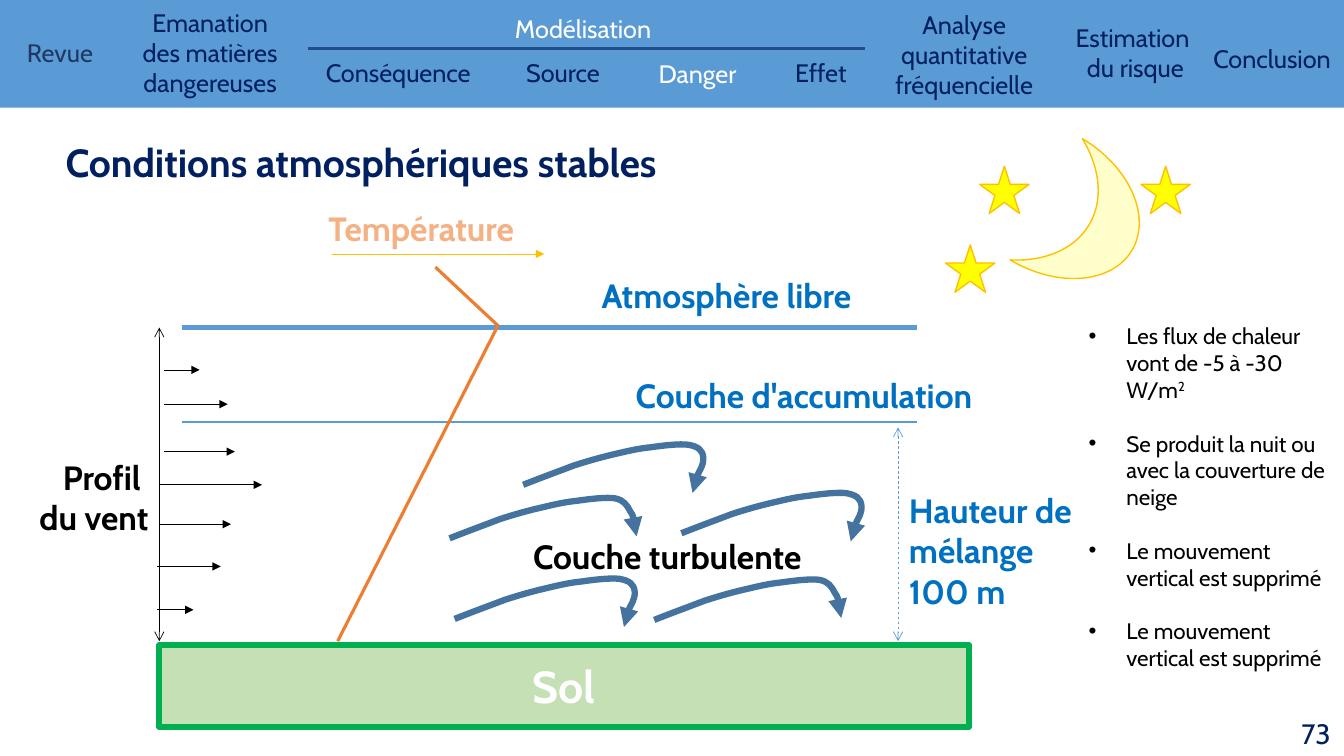
import dataclasses
import typing

import lxml.etree
import pptx
import pptx.dml.color
import pptx.enum.dml
import pptx.enum.shapes
import pptx.enum.text
import pptx.oxml.ns
import pptx.util

Pt = pptx.util.Pt
qn = pptx.oxml.ns.qn
Kind = pptx.enum.shapes.MSO_SHAPE
Align = pptx.enum.text.PP_ALIGN
Anchor = pptx.enum.text.MSO_ANCHOR
NAVY, WHITE, BLACK = "002060", "FFFFFF", "000000"
SKY, BLUE, GOLD, RUST = "5B9BD5", "0070C0", "FFC000", "ED7D31"


@dataclasses.dataclass(frozen=True)
class Label:
    text: str
    x: float
    y: float
    w: float
    h: float
    size: float = 18
    color: str = NAVY
    bold: bool = False
    align: typing.Any = Align.CENTER


@dataclasses.dataclass(frozen=True)
class Line:
    x1: float
    y1: float
    x2: float
    y2: float
    color: str = BLACK
    width: float = 0.5
    head: str = ""
    tail: str = ""
    dash: bool = False


@dataclasses.dataclass(frozen=True)
class Form:
    kind: typing.Any
    x: float
    y: float
    w: float
    h: float
    fill: str
    edge: str = ""
    width: float = 1
    turn: float = 0
    flip: bool = False


@dataclasses.dataclass(frozen=True)
class Gust:
    x: float
    y: float
    end: tuple


def rgb(code: str) -> pptx.dml.color.RGBColor:
    return pptx.dml.color.RGBColor.from_string(code)


def write(frame, text: str, *, size: float = 18, color: str = NAVY, bold: bool = False,
          align=Align.LEFT, anchor=Anchor.TOP, bullet: bool = False, gap: float = 0) -> None:
    frame.word_wrap = True
    frame.vertical_anchor = anchor
    for i, row in enumerate(text.split("\n")):
        para = frame.paragraphs[0] if i == 0 else frame.add_paragraph()
        para.alignment = align
        para.space_before = Pt(gap if i else 0)
        if bullet:
            props = para._p.get_or_add_pPr()
            props.set("marL", str(Pt(27)))
            props.set("indent", str(Pt(-27)))
            lxml.etree.SubElement(props, qn("a:buFont"), typeface="Arial")
            lxml.etree.SubElement(props, qn("a:buChar"), char="•")
        for j, part in enumerate(row.split("^")):
            run = para.add_run()
            run.text = part
            run.font.name = "Cabin"
            run.font.size = Pt(size)
            run.font.bold = bold
            run.font.color.rgb = rgb(color)
            if j:
                run._r.get_or_add_rPr().set("baseline", "30000")


def box(slide, x: float, y: float, w: float, h: float):
    return slide.shapes.add_textbox(Pt(x), Pt(y), Pt(w), Pt(h)).text_frame


def label(slide, item: Label) -> None:
    write(box(slide, item.x, item.y, item.w, item.h), item.text, size=item.size,
          color=item.color, bold=item.bold, align=item.align)


def tip(line, head: str, tail: str) -> None:
    ln = line._get_or_add_ln()
    for tag, style in (("a:headEnd", head), ("a:tailEnd", tail)):
        if style:
            lxml.etree.SubElement(ln, qn(tag), type=style)


def draw(slide, item: Line) -> None:
    link = slide.shapes.add_connector(pptx.enum.shapes.MSO_CONNECTOR.STRAIGHT,
                                      Pt(item.x1), Pt(item.y1), Pt(item.x2), Pt(item.y2))
    link.line.color.rgb = rgb(item.color)
    link.line.width = Pt(item.width)
    if item.dash:
        link.line.dash_style = pptx.enum.dml.MSO_LINE.DASH
    tip(link.line, item.head, item.tail)
    lxml.etree.SubElement(link._element.spPr, qn("a:effectLst"))


def form(slide, item: Form):
    shape = slide.shapes.add_shape(item.kind, Pt(item.x), Pt(item.y), Pt(item.w), Pt(item.h))
    shape.shadow.inherit = False
    shape.fill.solid()
    shape.fill.fore_color.rgb = rgb(item.fill)
    if item.edge:
        shape.line.color.rgb = rgb(item.edge)
        shape.line.width = Pt(item.width)
    else:
        shape.line.fill.background()
    shape.rotation = item.turn
    if item.flip:
        shape._element.spPr.find(qn("a:xfrm")).set("flipH", "1")
    return shape


RISE = ((12.4, -4.9), (24.7, -9.4), (36, -13.7), (47, -17.3), (57.6, -20.2), (67, -22.3),
        (76.3, -24.5), (82.5, -25.9), (91, -26.8), (99.4, -28), (111.6, -29.5), (118, -28.6))
HOOK = ((124.5, -27.4), (128.2, -25.2), (128.7, -19.4), (128.9, -13.7), (120.2, -0.7), (121, 5.8))
DROP = ((124.5, -27.4), (126.7, -23.8), (129, -19.4), (131.8, -15.1), (132.5, -7.9), (133.6, -1.4))


def swirl(slide, item: Gust) -> None:
    pen = slide.shapes.build_freeform(Pt(item.x), Pt(item.y))
    pen.add_line_segments([(Pt(item.x + dx), Pt(item.y + dy)) for dx, dy in RISE + item.end],
                          close=False)
    shape = pen.convert_to_shape()
    steps = list(shape._element.iter(qn("a:lnTo")))
    for i in range(0, len(steps), 3):
        curve = lxml.etree.SubElement(steps[i].getparent(), qn("a:cubicBezTo"))
        for step in steps[i:i + 3]:
            curve.append(step[0])
            step.getparent().remove(step)
    shape.shadow.inherit = False
    shape.fill.background()
    shape.line.color.rgb = rgb("43739E")
    shape.line.width = Pt(4.5)
    tip(shape.line, "", "triangle")


TABS = [
    Label("Revue", 12.2, 23, 80, 28.8, color="203864", align=Align.LEFT),
    Label("Effet", 523.4, 37.4, 126, 28),
    Label("Conséquence", 220.3, 37.4, 128.2, 28.8),
    Label("Danger", 439.2, 38.2, 118, 27.4, color=WHITE),
    Label("Source", 330.5, 37.4, 143.3, 28.8),
    Label("Modélisation", 220.3, 5.8, 392.4, 28.8, color=WHITE),
    Label("Conclusion", 857.2, 27.4, 102.8, 31),
    Label("Analyse quantitative fréquencielle", 625.7, 2.9, 126, 69),
    Label("Estimation \ndu risque", 748, 12.2, 126, 49.7),
    Label("Emanation des matières dangereuses", 91.4, 1.4, 117.4, 72),
]
NOTES = [
    Label("Atmosphère libre", 422.6, 193, 222.5, 36, 24, BLUE, True, Align.LEFT),
    Label("Couche d'accumulation", 447, 264.2, 296.6, 36, 24, BLUE, True, Align.LEFT),
    Label("Hauteur de\nmélange\n100 m", 642.2, 346.3, 157.7, 94.3, 24, BLUE, True, Align.LEFT),
    Label("Profil \ndu vent", 6.5, 322.6, 106.5, 65.5, 24, BLACK, True, Align.RIGHT),
    Label("Température", 227.5, 144.7, 172, 36, 24, "F4B183", True, Align.LEFT),
    Label("Couche turbulente", 332.6, 379.4, 247, 36, 24, BLACK, True, Align.RIGHT),
    Label("73", 733.7, 508, 224, 28.8, 20, align=Align.RIGHT),
]
SIGNS = [Form(Kind.MOON, 742.3, 110.2, 71.3, 100.8, "FFFFCC", GOLD, turn=30.8, flip=True)] + [
    Form(Kind.STAR_5_POINT, x, y, 35.3, 33.8, "FFFF00", GOLD)
    for x, y in ((699.8, 118.8), (815, 118.8), (675.4, 175))]
WINDS = [(264.2, 117.4, 142.6), (288.7, 117.4, 162.7), (322.6, 117.4, 167.8),
         (346.3, 113.8, 187.2), (374.4, 113.8, 165), (404.6, 112.3, 157.7), (435.6, 112.3, 138.2)]
LINES = [
    Line(220.3, 34.6, 617.8, 34.6, "224D8C", 2.25),
    Line(130.3, 234, 655.2, 234, SKY, 3),
    Line(641.5, 305.3, 641.5, 458, SKY, head="arrow", tail="arrow", dash=True),
    Line(130.3, 301.7, 655.2, 301.7, SKY, 1.5),
    Line(113.8, 234, 113.8, 458, head="arrow", tail="arrow"),
    Line(355.7, 232.6, 241.2, 458, RUST, 2.25),
    Line(355.7, 232.6, 311, 190.8, RUST, 2.25),
    Line(236.9, 181.4, 388.8, 181.4, GOLD, tail="triangle"),
] + [Line(x1, y, x2, y, tail="triangle") for y, x1, x2 in WINDS]
GUSTS = [Gust(486.7, 380.9, HOOK), Gust(467.3, 442.8, DROP), Gust(324.7, 442.1, HOOK),
         Gust(373.7, 346.3, HOOK), Gust(321.1, 384.5, DROP)]
FACTS = "\n".join(["Les flux de chaleur vont de -5 à -30 W/m^2",
                   "Se produit la nuit ou avec la couverture de neige",
                   "Le mouvement vertical est supprimé",
                   "Le mouvement vertical est supprimé"])


def main() -> None:
    deck = pptx.Presentation()
    deck.slide_width, deck.slide_height = Pt(960), Pt(540)
    slide = deck.slides.add_slide(deck.slide_layouts[5])
    title = slide.shapes.title
    title.left, title.top, title.width, title.height = Pt(39.6), Pt(95), Pt(560), Pt(45)
    write(title.text_frame, "Conditions atmosphériques stables", size=28, bold=True)
    form(slide, Form(Kind.RECTANGLE, 0, 0, 960, 77, SKY))
    soil = form(slide, Form(Kind.RECTANGLE, 113.8, 460.8, 578.2, 58.3, "C5E0B4", "00B050", 4.5))
    write(soil.text_frame, "Sol", size=32, color=WHITE, bold=True,
          align=Align.CENTER, anchor=Anchor.MIDDLE)
    for sign in SIGNS:
        form(slide, sign)
    for line in LINES:
        draw(slide, line)
    for gust in GUSTS:
        swirl(slide, gust)
    for item in TABS + NOTES:
        label(slide, item)
    facts = box(slide, 777.6, 226.8, 180.7, 259.2)
    facts.margin_left = 0
    write(facts, FACTS, size=16, color=BLACK, bullet=True, gap=19)
    deck.save("out.pptx")


if __name__ == "__main__":
    main()
